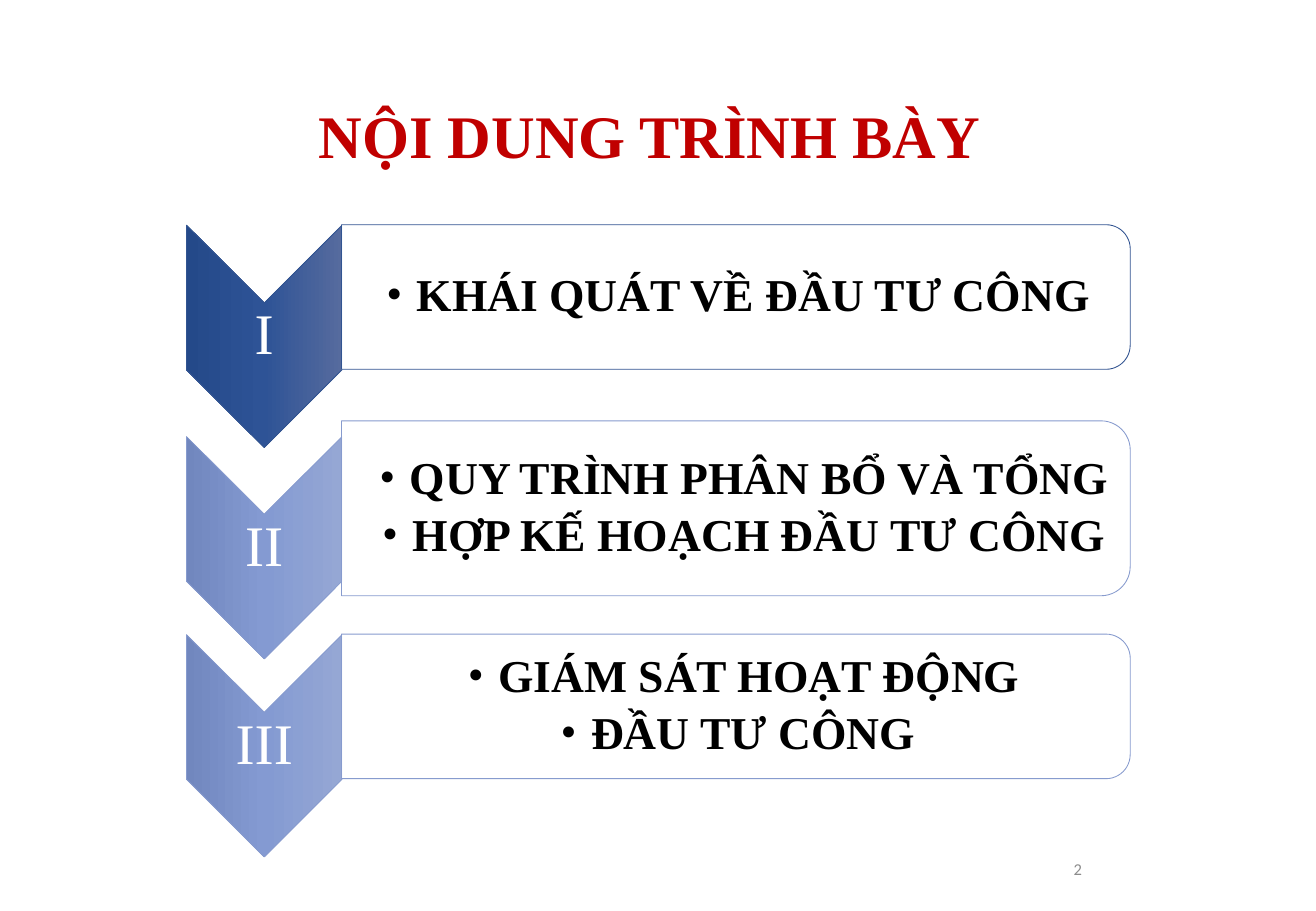
from copy import deepcopy
from dataclasses import dataclass

from lxml import etree
from pptx import Presentation
from pptx import util as u
from pptx.dml.color import RGBColor
from pptx.enum import shapes, text
from pptx.oxml.ns import qn

W, H = u.Inches(10.83), u.Inches(7.5)
COL, ROW = W / 100, H / 100  # the grid has 100 columns and 100 rows

RED = RGBColor(0xC0, 0x00, 0x00)
GREY = RGBColor(0x8C, 0x8C, 0x8C)
BLACK = RGBColor(0x00, 0x00, 0x00)
WHITE = RGBColor(0xFF, 0xFF, 0xFF)
NAVY = RGBColor(0x32, 0x54, 0x91)
NAVY_FADE = (RGBColor(0x56, 0x6B, 0x9E), RGBColor(0x2E, 0x53, 0x96), RGBColor(0x24, 0x49, 0x89))
SKY = RGBColor(0x87, 0x9B, 0xCE)
SKY_FADE = (RGBColor(0x95, 0xA7, 0xD4), RGBColor(0x84, 0x9A, 0xD2), RGBColor(0x71, 0x87, 0xBE))

SERIF = "Times New Roman"
CHEVRON_LEFT, CHEVRON_COLS, CHEVRON_ROWS = 14.17, 11.82, 24.4
PANEL_LEFT, PANEL_COLS, PANEL_MIDDLE = 25.95, 59.93, 7.87
LABEL_ROWS = 7.33


@dataclass
class Box:
    """Place on the grid, in columns and rows."""
    left: float
    top: float
    width: float
    height: float

    def emu(self) -> tuple[int, int, int, int]:
        return (round(self.left * COL), round(self.top * ROW),
                round(self.width * COL), round(self.height * ROW))


@dataclass
class Section:
    numeral: str
    lines: list[str]
    top: float
    panel_rows: float
    line: RGBColor
    fade: tuple[RGBColor, RGBColor, RGBColor]


SECTIONS = [
    Section("I", ["KHÁI QUÁT VỀ ĐẦU TƯ CÔNG "], 24.73, 15.87, NAVY, NAVY_FADE),
    Section("II", ["QUY TRÌNH PHÂN BỔ VÀ TỔNG", "HỢP KẾ HOẠCH ĐẦU TƯ CÔNG"],
            47.93, 19.2, SKY, SKY_FADE),
    Section("III", ["GIÁM SÁT HOẠT ĐỘNG", "ĐẦU TƯ CÔNG "], 69.67, 15.87, SKY, SKY_FADE),
]


def place(sp, box: Box) -> None:
    sp.left, sp.top, sp.width, sp.height = box.emu()


def write(sp, lines: list[str], size: float, color: RGBColor, font: str = SERIF,
          bold: bool = False, spacing: float = 0.9, after: float = 0, bullet: bool = False,
          inset: float = 0.02, inset_left: float = 0.02) -> None:
    tf = sp.text_frame
    tf.word_wrap = True
    tf.auto_size = text.MSO_AUTO_SIZE.NONE
    tf.vertical_anchor = text.MSO_ANCHOR.MIDDLE
    tf.margin_left = u.Inches(inset_left)
    tf.margin_top = tf.margin_right = tf.margin_bottom = u.Inches(inset)
    for i, line in enumerate(lines):
        p = tf.add_paragraph() if i else tf.paragraphs[0]
        p.alignment = text.PP_ALIGN.CENTER
        p.line_spacing = spacing
        p.space_before, p.space_after = u.Pt(0), u.Pt(after)
        if bullet:
            pPr = p._p.get_or_add_pPr()
            pPr.set("marL", str(u.Inches(0.25)))
            pPr.set("indent", str(-u.Inches(0.25)))
            etree.SubElement(pPr, qn("a:buFont")).set("typeface", SERIF)
            etree.SubElement(pPr, qn("a:buChar")).set("char", "•")
        r = p.add_run()
        r.text = line
        r.font.name, r.font.size, r.font.bold = font, u.Pt(size), bold
        r.font.color.rgb = color


def add_turned(s, kind: shapes.MSO_SHAPE, box: Box, line: RGBColor):
    """Add a shape turned 90 degrees so that it covers the box as seen."""
    left, top, width, height = box.emu()
    shift = (width - height) // 2
    sp = s.shapes.add_shape(kind, left + shift, top - shift, height, width)
    sp.rotation = 90
    sp.shadow.inherit = False
    sp.line.color.rgb = line
    sp.line.width = u.Pt(0.5)
    return sp


def fade_fill(sp, colors: tuple[RGBColor, ...]) -> None:
    """Fill with evenly spaced gradient stops from top to bottom."""
    sp.fill.gradient()
    sp.fill.gradient_angle = 270
    stop_list = sp._element.spPr.find(".//" + qn("a:gsLst"))
    stop_list.append(deepcopy(stop_list[-1]))
    for i, (stop, color) in enumerate(zip(sp.fill.gradient_stops, colors)):
        stop.color.rgb = color
        stop.position = i / (len(colors) - 1)


def add_section(s, section: Section, body) -> None:
    chevron_box = Box(CHEVRON_LEFT, section.top, CHEVRON_COLS, CHEVRON_ROWS)
    chevron = add_turned(s, shapes.MSO_SHAPE.CHEVRON, chevron_box, section.line)
    fade_fill(chevron, section.fade)

    label_top = section.top + (CHEVRON_ROWS - LABEL_ROWS) / 2
    label = s.shapes.add_textbox(*Box(CHEVRON_LEFT, label_top, CHEVRON_COLS, LABEL_ROWS).emu())
    write(label, [section.numeral], 34, WHITE)

    panel_top = section.top + PANEL_MIDDLE - section.panel_rows / 2
    panel_box = Box(PANEL_LEFT, panel_top, PANEL_COLS, section.panel_rows)
    panel = add_turned(s, shapes.MSO_SHAPE.ROUND_2_SAME_RECTANGLE, panel_box, section.line)
    panel.fill.solid()
    panel.fill.fore_color.rgb = WHITE
    color = panel._element.spPr.find(qn("a:solidFill"))[0]
    etree.SubElement(color, qn("a:alpha")).set("val", "90000")

    place(body, Box(PANEL_LEFT, panel_top + 0.8, PANEL_COLS - 0.56, section.panel_rows - 1.6))
    write(body, section.lines, 27, BLACK, bold=True, after=4.5, bullet=True, inset_left=0.21)
    s.shapes._spTree.append(body._element)  # bring the list in front of its panel


def main() -> None:
    prs = Presentation()
    prs.slide_width, prs.slide_height = W, H
    s = prs.slides.add_slide(prs.slide_layouts.get_by_name("Comparison"))
    title, *bodies = s.placeholders
    place(title, Box(22.71, 9.33, 53.28, 11.73))
    write(title, ["NỘI DUNG TRÌNH BÀY"], 35.8, RED, bold=True)

    spare = bodies.pop()._element
    spare.getparent().remove(spare)
    for section, body in zip(SECTIONS, bodies):
        add_section(s, section, body)

    number = s.shapes.add_textbox(*Box(70.64, 92.67, 22.53, 5.33).emu())
    write(number, ["2"], 9.8, GREY, font="Calibri", spacing=1)
    prs.save("out.pptx")


if __name__ == "__main__":
    main()
